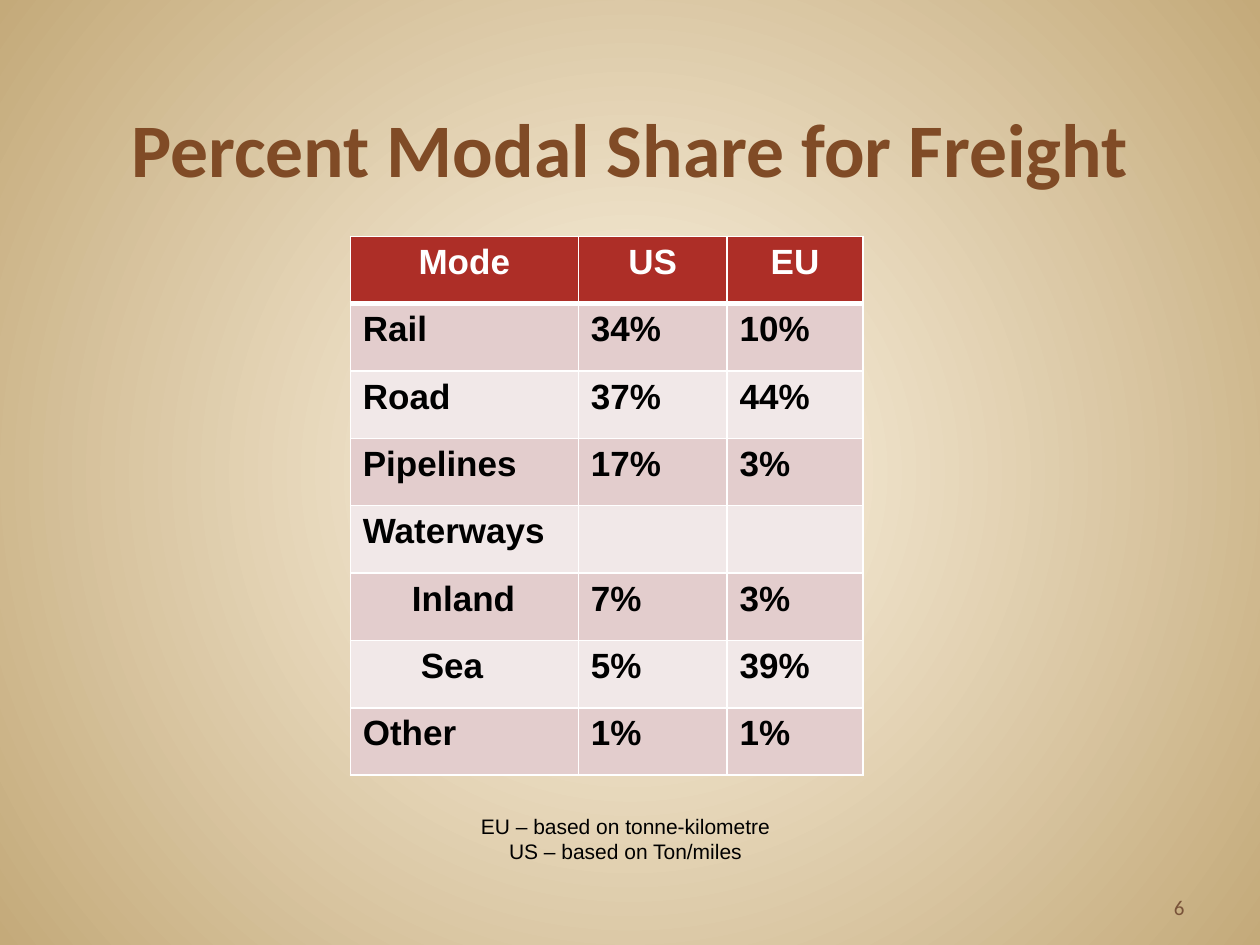
"""Builds a slide with a table of freight modal shares in the US and the EU."""
from dataclasses import dataclass

from lxml.etree import SubElement
from pptx import Presentation
from pptx.dml.color import RGBColor
from pptx.enum.text import MSO_ANCHOR, PP_ALIGN
from pptx.oxml.ns import qn
from pptx.util import Inches, Pt

W, H = 10, 7.5
INK, WHITE, HEADER = "000000", "FFFFFF", "AD2E27"
BANDS = ("E3CDCD", "F1E8E8")
COLS = (1.81, 1.18, 1.08)
ROW_H = 4.28 / 8


@dataclass(frozen=True)
class Style:
    size: float
    color: str
    font: str = "Arial"
    bold: bool = False
    align: PP_ALIGN = PP_ALIGN.LEFT


@dataclass(frozen=True)
class Mode:
    name: str
    us: str = ""
    eu: str = ""
    indent: float = 0


MODES = (
    Mode("Rail", "34%", "10%"),
    Mode("Road", "37%", "44%"),
    Mode("Pipelines", "17%", "3%"),
    Mode("Waterways"),
    Mode("Inland", "7%", "3%", 0.39),
    Mode("Sea", "5%", "39%", 0.46),
    Mode("Other", "1%", "1%"),
)


def rgb(value: str) -> RGBColor:
    return RGBColor.from_string(value)


def write(tf, lines: tuple, style: Style) -> None:
    for i, line in enumerate(lines):
        p = tf.add_paragraph() if i else tf.paragraphs[0]
        p.alignment = style.align
        r = p.add_run()
        r.text = line
        r.font.size, r.font.name, r.font.bold = Pt(style.size), style.font, style.bold
        r.font.color.rgb = rgb(style.color)


def place(sp, x: float, y: float, w: float, h: float) -> None:
    sp.left, sp.top, sp.width, sp.height = (Inches(v) for v in (x, y, w, h))


def add_text(s, box: tuple, lines: tuple, style: Style, anchor=MSO_ANCHOR.TOP) -> None:
    tf = s.shapes.add_textbox(*(Inches(v) for v in box)).text_frame
    tf.word_wrap = True
    tf.vertical_anchor = anchor
    write(tf, lines, style)


def set_background(s, center: str, edge: str) -> None:
    fill = s.background.fill
    fill.gradient()
    for stop, position, color in zip(fill.gradient_stops, (0, 1), (center, edge)):
        stop.position = position
        stop.color.rgb = rgb(color)
    grad = s.element.find(".//" + qn("a:gradFill"))
    grad.remove(grad.find(qn("a:lin")))
    circle = SubElement(grad, qn("a:path"), {"path": "circle"})
    SubElement(circle, qn("a:fillToRect"), dict.fromkeys("ltrb", "50000"))


def set_borders(cell, top: float, bottom: float) -> None:
    tc_pr = cell._tc.get_or_add_tcPr()
    for side, width in (("L", 1), ("R", 1), ("T", top), ("B", bottom)):
        ln = SubElement(tc_pr, qn(f"a:ln{side}"), {"w": str(Pt(width))})
        SubElement(SubElement(ln, qn("a:solidFill")), qn("a:srgbClr"), {"val": WHITE})


def add_mode_table(s, x: float, y: float) -> None:
    rows = (Mode("Mode", "US", "EU"),) + MODES
    size = (Inches(v) for v in (x, y, sum(COLS), ROW_H * len(rows)))
    table = s.shapes.add_table(len(rows), len(COLS), *size).table
    for column, width in zip(table.columns, COLS):
        column.width = Inches(width)
    head = Style(20, WHITE, bold=True, align=PP_ALIGN.CENTER)
    body = Style(20, INK, bold=True)
    for i, mode in enumerate(rows):
        for j, text in enumerate((mode.name, mode.us, mode.eu)):
            cell = table.cell(i, j)
            set_borders(cell, 3 if i == 1 else 1, 1 if i else 3)
            cell.fill.solid()
            cell.fill.fore_color.rgb = rgb(BANDS[(i - 1) % 2] if i else HEADER)
            if text:
                write(cell.text_frame, (text,), body if i else head)
        if mode.indent:
            table.cell(i, 0).margin_left = Inches(0.1 + mode.indent)


def main() -> None:
    prs = Presentation()
    prs.slide_width, prs.slide_height = Inches(W), Inches(H)
    s = prs.slides.add_slide(prs.slide_layouts[5])
    set_background(s, "FFF7E8", "C4AA7A")

    title = s.shapes.title
    place(title, W * 0.05, 0.33, W * 0.9, H / 6)
    title.text_frame.vertical_anchor = MSO_ANCHOR.BOTTOM
    write(title.text_frame, ("Percent Modal Share for Freight",),
          Style(43.2, "804B26", "Calibri", True, PP_ALIGN.CENTER))

    add_mode_table(s, 2.78, H / 4)
    add_text(s, (0.77, 6.41, 8.39, 0.5),
             ("EU – based on tonne-kilometre", "US – based on Ton/miles"),
             Style(12, INK, align=PP_ALIGN.CENTER))
    add_text(s, (7.17, 6.83, 2.33, 0.52), ("6",),
             Style(12, "795339", "Calibri", align=PP_ALIGN.RIGHT), MSO_ANCHOR.BOTTOM)
    prs.save("out.pptx")


if __name__ == "__main__":
    main()
